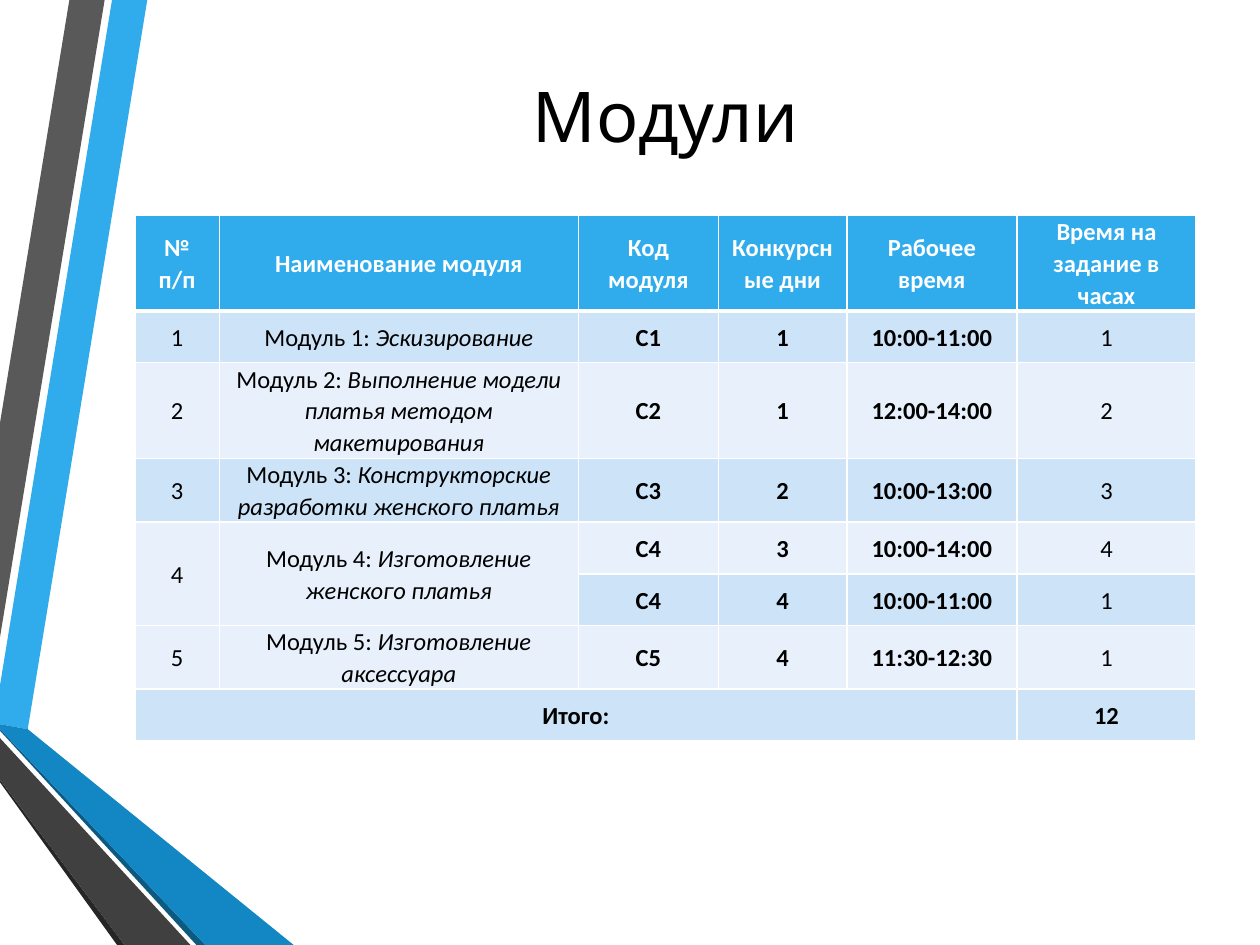
import dataclasses

import lxml.etree
import pptx
import pptx.dml.color
import pptx.enum.text
import pptx.oxml.ns
import pptx.util

Cm = pptx.util.Cm
Pt = pptx.util.Pt
ALIGN = pptx.enum.text.PP_ALIGN
ANCHOR = pptx.enum.text.MSO_ANCHOR


@dataclasses.dataclass
class Theme:
    black: str = "000000"
    white: str = "FFFFFF"
    sky: str = "30ACEC"
    blue: str = "1287C3"
    navy: str = "0C5A82"
    gray: str = "595959"
    dark: str = "404040"
    coal: str = "262626"
    bands: tuple = ("CDE3F8", "E8F1FB")
    head_font: str = "Cabin"
    body_font: str = "Calibri"
    head_size: int = 40
    body_size: int = 14
    thin: int = 1
    thick: int = 3


class Page:
    def __init__(self, slide, theme):
        self.slide = slide
        self.theme = theme

    def paint(self, fill, color):
        fill.solid()
        fill.fore_color.rgb = pptx.dml.color.RGBColor.from_string(color)

    def run(self, para, text, size, name, color, bold=False, italic=False):
        font = para.add_run().font
        para.runs[-1].text = text
        font.size, font.name = Pt(size), name
        font.bold, font.italic = bold, italic
        font.color.rgb = pptx.dml.color.RGBColor.from_string(color)

    def ribbon(self, color, points):
        spots = [(Cm(x), Cm(y)) for x, y in points]
        pen = self.slide.shapes.build_freeform(*spots[0])
        pen.add_line_segments(spots[1:])
        shape = pen.convert_to_shape()
        shape.shadow.inherit = False
        shape.line.fill.background()
        self.paint(shape.fill, color)

    def title(self, text, left, top, width, height):
        """Fill the title and bring it in front of what is already there."""
        box = self.slide.shapes.title
        box.left, box.top = Cm(left), Cm(top)
        box.width, box.height = Cm(width), Cm(height)
        box.text_frame.vertical_anchor = ANCHOR.MIDDLE
        para = box.text_frame.paragraphs[0]
        para.alignment = ALIGN.CENTER
        look = self.theme
        self.run(para, text, look.head_size, look.head_font, look.black)
        tree = box.element.getparent()
        tree.append(box.element)

    def edges(self, cell, top, base):
        """Draw the four cell borders, which must come before the fill."""
        props = cell._tc.get_or_add_tcPr()
        qn = pptx.oxml.ns.qn
        widths = {"L": self.theme.thin, "R": self.theme.thin, "T": top, "B": base}
        for spot, (side, width) in enumerate(widths.items()):
            line = lxml.etree.Element(qn("a:ln" + side), w=str(Pt(width)))
            fill = lxml.etree.SubElement(line, qn("a:solidFill"))
            lxml.etree.SubElement(fill, qn("a:srgbClr"), val=self.theme.white)
            props.insert(spot, line)

    def cell(self, cell, row, runs):
        look = self.theme
        head = row == 0
        cell.margin_left = cell.margin_right = Cm(0.18)
        cell.margin_top = cell.margin_bottom = 0
        cell.vertical_anchor = ANCHOR.MIDDLE
        self.paint(cell.fill, look.sky if head else look.bands[(row - 1) % 2])
        self.edges(cell, look.thick if row == 1 else look.thin,
                   look.thick if head else look.thin)
        para = cell.text_frame.paragraphs[0]
        para.alignment = ALIGN.CENTER
        para.line_spacing = 1.07
        para.space_after = Pt(8)
        for text, bold, italic in runs:
            self.run(para, text, look.body_size, look.body_font,
                     look.white if head else look.black, bold, italic)

    def table(self, rows, widths, left, top, height, spans):
        frame = self.slide.shapes.add_table(
            len(rows), len(widths), Cm(left), Cm(top),
            Cm(sum(widths)), Cm(height * len(rows)))
        grid = frame.table
        grid.horz_banding = False
        for col, width in zip(grid.columns, widths):
            col.width = Cm(width)
        for r, row in enumerate(rows):
            for c, runs in enumerate(row):
                self.cell(grid.cell(r, c), r, runs)
        for first, last in spans:
            grid.cell(*first).merge(grid.cell(*last))


def plain(text):
    return [(text, False, False)]


def strong(text):
    return [(text, True, False)]


def entry(num, name, code, day, time, hours):
    """Lay out one module row; without a number it continues the row above."""
    label = plain(f"Модуль {num}: ") + [(name, False, True)]
    lead = [plain(num), label] if num else [[], []]
    return lead + [strong(code), strong(day), strong(time), plain(hours)]


HEADS = ["№ п/п", "Наименование модуля", "Код модуля", "Конкурсные дни",
         "Рабочее время", "Время на задание в часах"]
MODULES = [
    ("1", "Эскизирование", "С1", "1", "10:00-11:00", "1"),
    ("2", "Выполнение модели платья методом макетирования",
     "С2", "1", "12:00-14:00", "2"),
    ("3", "Конструкторские разработки женского платья",
     "С3", "2", "10:00-13:00", "3"),
    ("4", "Изготовление женского платья", "С4", "3", "10:00-14:00", "4"),
    ("", "", "С4", "4", "10:00-11:00", "1"),
    ("5", "Изготовление аксессуара", "С5", "4", "11:30-12:30", "1"),
]
SPANS = [((4, 0), (5, 0)), ((4, 1), (5, 1)), ((7, 0), (7, 4))]
WIDTHS = [1.7, 7.24, 2.82, 2.59, 3.43, 3.61]
LEFT = 2.72
FOOT = 19.05


def main():
    deck = pptx.Presentation()
    deck.slide_width, deck.slide_height = Cm(25.4), Cm(FOOT)
    look = Theme()
    page = Page(deck.slides.add_slide(deck.slide_layouts[5]), look)

    ribbons = [
        (look.sky, [(0, 13.82), (0, 14.6), (0.56, 14.7), (2.97, 0), (2.26, 0)]),
        (look.gray, [(2.11, 0), (1.4, 0), (0, 8.53), (0, 12.85)]),
        (look.coal, [(0, 15.72), (0, 15.77), (2.36, FOOT), (2.51, FOOT)]),
        (look.navy, [(0, 14.7), (0, 14.73), (3.96, FOOT), (4.14, FOOT)]),
        (look.blue, [(0, 14.7), (4.14, FOOT), (5.92, FOOT), (0.56, 14.7),
                     (0, 14.6)]),
        (look.dark, [(0, 15.72), (2.51, FOOT), (3.84, FOOT), (0, 14.88)]),
    ]
    for color, points in ribbons:
        page.ribbon(color, points)

    page.title("Модули", LEFT, 1.27, sum(WIDTHS), 2.08)
    rows = [[strong(head) for head in HEADS]]
    rows += [entry(*module) for module in MODULES]
    rows.append([strong("Итого:"), [], [], [], [], strong("12")])
    page.table(rows, WIDTHS, LEFT, 4.34, 1.04, SPANS)
    deck.save("out.pptx")


if __name__ == "__main__":
    main()
